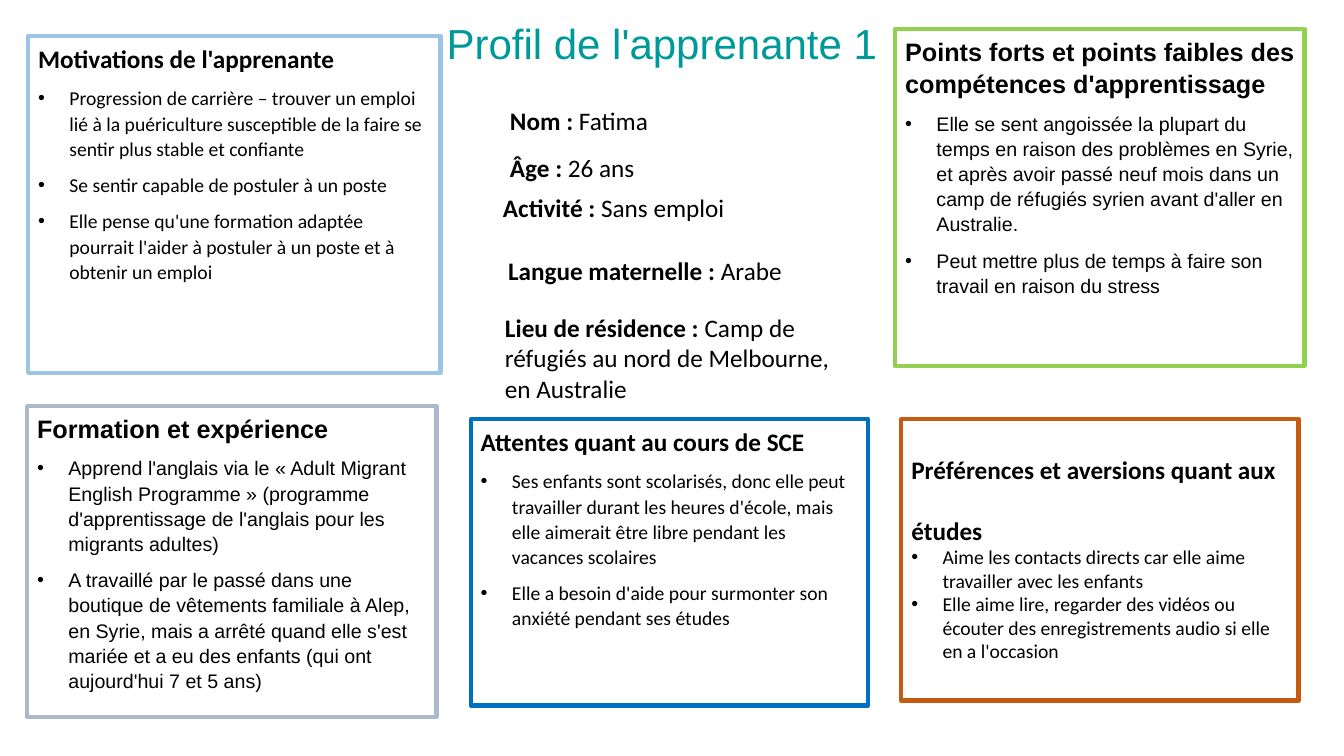
from lxml.etree import SubElement
from pptx import Presentation
from pptx.dml.color import RGBColor
from pptx.enum.shapes import MSO_SHAPE
from pptx.enum.text import MSO_ANCHOR, PP_ALIGN
from pptx.oxml.ns import qn
from pptx.util import Inches, Pt

COLORS = {
    "title": "009999", "text": "000000", "panel": "FFFFFF",
    "expectations": "0070C0", "motivations": "9DC3E6", "strengths": "92D050",
    "background": "ADB9CA", "preferences": "C55A11",
}

# Content
TITLE = ("Profil de l'apprenante 1", (4.33, 0.18, 4.51, 0.56))

# Each panel: colour name, font, box, heading, bullets
PANELS = [
    ("expectations", "Calibri", (4.67, 4.16, 3.94, 2.84),
     "Attentes quant au cours de SCE",
     ["Ses enfants sont scolarisés, donc elle peut travailler durant les heures d'école, "
      "mais elle aimerait être libre pendant les vacances scolaires",
      "Elle a besoin d'aide pour surmonter son anxiété pendant ses études"]),
    ("motivations", "Calibri", (0.28, 0.36, 4.09, 3.34),
     "Motivations de l'apprenante",
     ["Progression de carrière – trouver un emploi lié à la puériculture susceptible "
      "de la faire se sentir plus stable et confiante",
      "Se sentir capable de postuler à un poste",
      "Elle pense qu'une formation adaptée pourrait l'aider à postuler à un poste "
      "et à obtenir un emploi"]),
    ("strengths", "Arial", (8.88, 0.29, 4.06, 3.34),
     "Points forts et points faibles des compétences d'apprentissage",
     ["Elle se sent angoissée la plupart du temps en raison des problèmes en Syrie, "
      "et après avoir passé neuf mois dans un camp de réfugiés syrien avant d'aller "
      "en Australie.",
      "Peut mettre plus de temps à faire son travail en raison du stress"]),
    ("background", "Arial", (0.27, 4.03, 4.06, 3.08),
     "Formation et expérience",
     ["Apprend l'anglais via le « Adult Migrant English Programme » (programme "
      "d'apprentissage de l'anglais pour les migrants adultes)",
      "A travaillé par le passé dans une boutique de vêtements familiale à Alep, "
      "en Syrie, mais a arrêté quand elle s'est mariée et a eu des enfants "
      "(qui ont aujourd'hui 7 et 5 ans)"]),
    ("preferences", "Calibri", (8.94, 4.16, 3.94, 2.79),
     "Préférences et aversions quant aux études",
     ["Aime les contacts directs car elle aime travailler avec les enfants",
      "Elle aime lire, regarder des vidéos ou écouter des enregistrements audio "
      "si elle en a l'occasion"]),
]

# Each fact: label, value, box
FACTS = [
    ("Nom :", " Fatima", (4.96, 1.0, 3.76, 0.4)),
    ("Âge :", " 26 ans", (4.96, 1.46, 3.17, 0.4)),
    ("Activité :", " Sans emploi", (4.89, 1.86, 3.45, 0.4)),
    ("Langue maternelle :", " Arabe", (4.94, 2.48, 3.45, 0.4)),
    ("Lieu de résidence :", " Camp de réfugiés au nord de Melbourne, en Australie",
     (4.91, 3.05, 3.45, 0.71)),
]

# Paragraph formats; the preferences panel has its own spacing
HEADING = {"line_spacing": 1.07, "space_after": Pt(8)}
BULLET = {"line_spacing": 1.07, "space_after": Pt(8)}
SPECIAL = {"preferences": ({"line_spacing": 2.0}, {"line_spacing": 1.0})}
BULLET_INDENT = Inches(0.31)


def rgb(name):
    return RGBColor.from_string(COLORS[name])


def set_all(target, values):
    for name, value in values.items():
        setattr(target, name, value)


def place(shape, box):
    set_all(shape, dict(zip(("left", "top", "width", "height"), map(Inches, box))))


def add_run(paragraph, text, size, font="Calibri", bold=False, color="text"):
    run = paragraph.add_run()
    run.text = text
    set_all(run.font, {"size": Pt(size), "name": font, "bold": bold})
    run.font.color.rgb = rgb(color)


def add_bullet(paragraph):
    properties = paragraph._p.get_or_add_pPr()
    properties.set("marL", str(BULLET_INDENT))
    properties.set("indent", str(-BULLET_INDENT))
    SubElement(properties, qn("a:buFont")).set("typeface", "Arial")
    SubElement(properties, qn("a:buChar")).set("char", "•")


def add_panel(slide, name, font, box, heading, bullets):
    shape = slide.shapes.add_shape(MSO_SHAPE.RECTANGLE, *map(Inches, box))
    shape.shadow.inherit = False
    shape.fill.solid()
    shape.fill.fore_color.rgb = rgb("panel")
    shape.line.color.rgb = rgb(name)
    shape.line.width = Pt(3)
    frame = shape.text_frame
    set_all(frame, {"word_wrap": True, "vertical_anchor": MSO_ANCHOR.TOP})
    heading_format, bullet_format = SPECIAL.get(name, (HEADING, BULLET))

    paragraph = frame.paragraphs[0]
    set_all(paragraph, {"alignment": PP_ALIGN.LEFT, **heading_format})
    add_run(paragraph, heading, 18, font, bold=True)
    for text in bullets:
        paragraph = frame.add_paragraph()
        set_all(paragraph, {"alignment": PP_ALIGN.LEFT, **bullet_format})
        add_bullet(paragraph)
        add_run(paragraph, text, 14, font)


def add_fact(slide, label, value, box):
    frame = slide.shapes.add_textbox(*map(Inches, box)).text_frame
    frame.word_wrap = True
    add_run(frame.paragraphs[0], label, 18, bold=True)
    add_run(frame.paragraphs[0], value, 18)


def add_title(slide, text, box):
    title = slide.shapes.title
    place(title, box)
    set_all(title.text_frame, {"word_wrap": False, "vertical_anchor": MSO_ANCHOR.TOP})
    paragraph = title.text_frame.paragraphs[0]
    set_all(paragraph, {"alignment": PP_ALIGN.LEFT, "line_spacing": 0.9,
                        "space_before": Pt(10)})
    add_run(paragraph, text, 30, "Arial", color="title")


def main():
    presentation = Presentation()
    set_all(presentation, {"slide_width": Inches(13.33), "slide_height": Inches(7.5)})
    slide = presentation.slides.add_slide(presentation.slide_layouts[5])
    add_title(slide, *TITLE)
    for panel in PANELS:
        add_panel(slide, *panel)
    for fact in FACTS:
        add_fact(slide, *fact)
    presentation.save("out.pptx")


if __name__ == "__main__":
    main()
